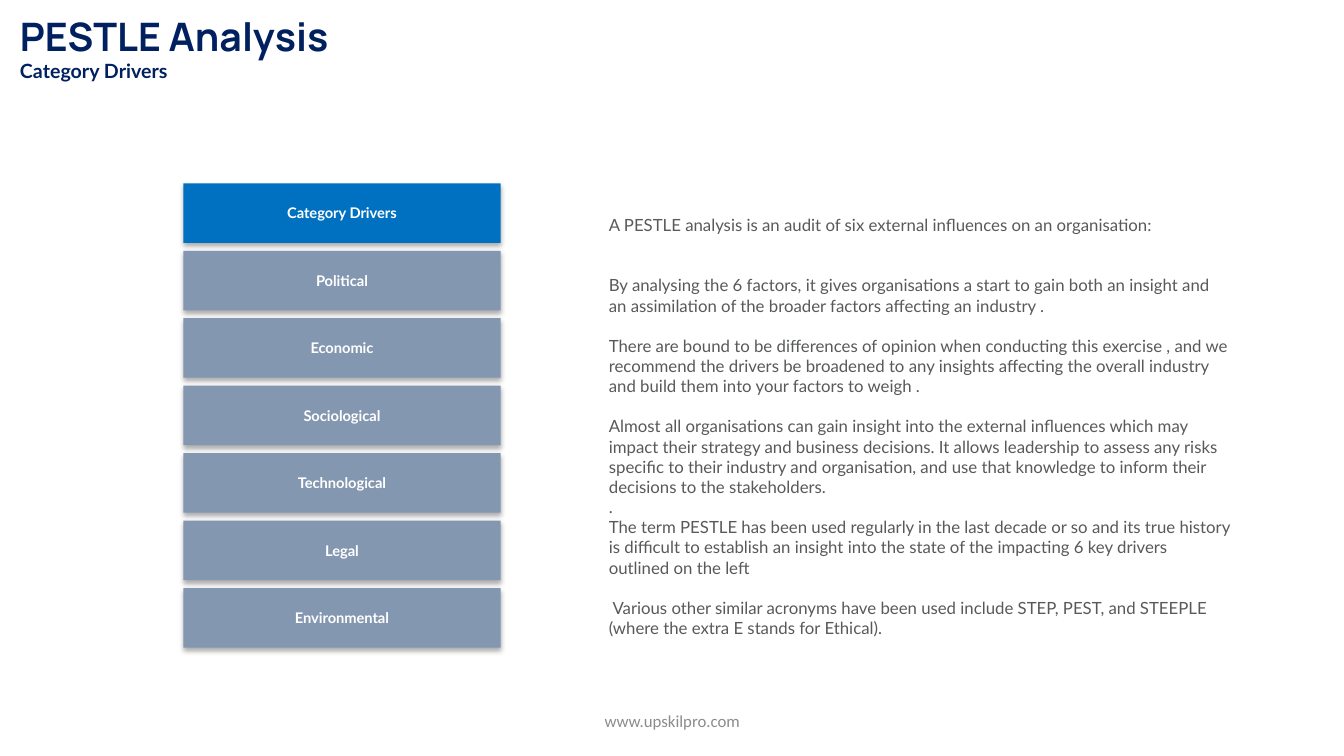
import pptx
import pptx.util
import pptx.dml.color
import pptx.enum.shapes
import pptx.enum.text
import pptx.oxml
import pptx.oxml.ns
from pptx.util import Cm

COLOURS = {
    "navy": "002060",
    "blue": "0070C0",
    "slate": "8497B0",
    "white": "FFFFFF",
    "text": "58595B",
    "footer": "8C8C8C",
}

DRIVERS = ["Category Drivers", "Political", "Economic", "Sociological",
           "Technological", "Legal", "Environmental"]

LINE = 14.4
EXPLANATION = [
    (0, "A PESTLE analysis is an audit of six external influences on an organisation:"),
    (2, "By analysing the 6 factors, it gives organisations a start to gain both an "
        "insight and an assimilation of the broader factors affecting an industry ."),
    (1, "There are bound to be differences of opinion when conducting this exercise , "
        "and we recommend the drivers be broadened to any insights affecting the "
        "overall industry and build them into your factors to weigh ."),
    (1, "Almost all organisations can gain insight into the external influences which "
        "may impact their strategy and business decisions. It allows leadership to "
        "assess any risks specific to their industry and organisation, and use that "
        "knowledge to inform their decisions to the stakeholders."),
    (0, "."),
    (0, "The term PESTLE has been used regularly in the last decade or so and its true "
        "history is difficult to establish an insight into the state of the impacting "
        "6 key drivers outlined on the left"),
    (1, " Various other similar acronyms have been used include STEP, PEST, and STEEPLE "
        "(where the extra E stands for Ethical)."),
]


def rgb(name):
    return pptx.dml.color.RGBColor.from_string(COLOURS[name])


def style(paragraph, size, font, colour, bold=False, align="LEFT", before=0):
    paragraph.alignment = getattr(pptx.enum.text.PP_ALIGN, align)
    paragraph.space_before = pptx.util.Pt(before)
    paragraph.font.size = pptx.util.Pt(size)
    paragraph.font.name = font
    paragraph.font.bold = bold
    paragraph.font.color.rgb = rgb(colour)


def place(holder, left, top, width, height):
    holder.left, holder.top = Cm(left), Cm(top)
    holder.width, holder.height = Cm(width), Cm(height)
    frame = holder.text_frame
    frame.word_wrap = True
    frame.auto_size = pptx.enum.text.MSO_AUTO_SIZE.NONE
    frame.vertical_anchor = pptx.enum.text.MSO_ANCHOR.TOP
    return frame


def remove_bullet(paragraph):
    properties = paragraph._p.get_or_add_pPr()
    properties.set("marL", "0")
    properties.set("indent", "0")
    properties.append(pptx.oxml.parse_xml(
        f"<a:buNone {pptx.oxml.ns.nsdecls('a')}/>"))


def add_soft_shadow(shape):
    shape.shadow.inherit = False
    effects = shape._element.spPr.find(pptx.oxml.ns.qn("a:effectLst"))
    effects.append(pptx.oxml.parse_xml(
        f'<a:outerShdw {pptx.oxml.ns.nsdecls("a")} blurRad="44450" dist="27940" '
        'dir="5400000" algn="ctr" rotWithShape="0"><a:srgbClr val="000000">'
        '<a:alpha val="32000"/></a:srgbClr></a:outerShdw>'))


def add_heading(slide):
    frame = place(slide.shapes.title, 0.25, 0.18, 26.75, 2.06)
    frame.text = "PESTLE Analysis\nCategory Drivers"
    heading, subheading = frame.paragraphs
    style(heading, 28, "Manrope", "navy", bold=True)
    style(subheading, 14, "Lato", "navy", bold=True)


def add_explanation(slide):
    frame = place(slide.placeholders[1], 15.09, 5.28, 16.21, 11.02)
    frame.text = "\n".join(text for _, text in EXPLANATION)
    for paragraph, (gap, _) in zip(frame.paragraphs, EXPLANATION):
        remove_bullet(paragraph)
        style(paragraph, 12, "Lato", "text", before=gap * LINE)


def add_driver(slide, label, top, fill):
    bar = slide.shapes.add_shape(pptx.enum.shapes.MSO_SHAPE.RECTANGLE,
                                 Cm(4.62), Cm(top), Cm(8), Cm(1.5))
    bar.fill.solid()
    bar.fill.fore_color.rgb = rgb(fill)
    bar.line.fill.background()
    add_soft_shadow(bar)
    frame = bar.text_frame
    frame.vertical_anchor = pptx.enum.text.MSO_ANCHOR.MIDDLE
    frame.text = label
    style(frame.paragraphs[0], 10.5, "Lato", "white", bold=True, align="CENTER")


def add_footer(slide):
    box = slide.shapes.add_textbox(Cm(11.23), Cm(17.65), Cm(11.43), Cm(1.02))
    frame = box.text_frame
    frame.word_wrap = True
    frame.vertical_anchor = pptx.enum.text.MSO_ANCHOR.MIDDLE
    frame.text = "www.upskilpro.com"
    style(frame.paragraphs[0], 12, "Calibri", "footer", align="CENTER")


def main():
    deck = pptx.Presentation()
    deck.slide_width, deck.slide_height = Cm(33.87), Cm(19.05)
    slide = deck.slides.add_slide(deck.slide_layouts[1])
    add_explanation(slide)
    add_heading(slide)
    for row, label in enumerate(DRIVERS):
        add_driver(slide, label, 4.62 + 1.7 * row, "slate" if row else "blue")
    add_footer(slide)
    deck.save("out.pptx")


if __name__ == "__main__":
    main()
